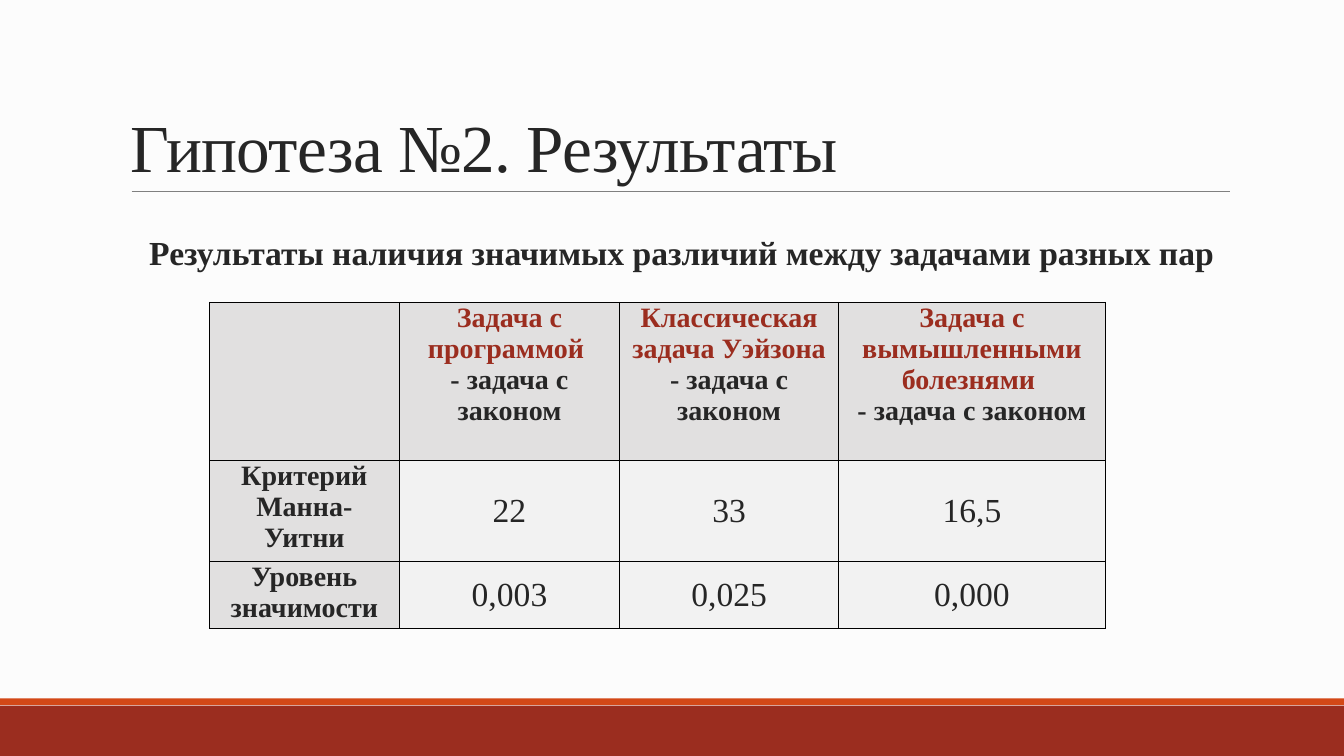
from lxml.etree import SubElement
from pptx import Presentation
from pptx.dml.color import RGBColor
from pptx.enum.shapes import MSO_CONNECTOR as Connector, MSO_SHAPE as Shape
from pptx.enum.text import MSO_ANCHOR as Anchor, PP_ALIGN as Align
from pptx.oxml.ns import qn
from pptx.util import Cm, Pt

COLORS = {
    "background": "FCFCFC", "text": "262626", "accent": "9B2D1F", "stripe": "D34817",
    "rule": "808080", "border": "000000", "header": "E1E0E0", "body": "F2F2F2",
}
LAW_TASK = ("- задача с законом", "text")
# Each cell is a list of paragraphs, each paragraph a list of (text, color) runs.
HEADER = [
    [],
    [[("Задача с программой ", "accent")], [LAW_TASK]],
    [[("Классическая задача Уэйзона ", "accent"), LAW_TASK]],
    [[("Задача с вымышленными болезнями ", "accent")], [LAW_TASK]],
]
RESULTS = [
    ("Критерий Манна-Уитни", "22", "33", "16,5"),
    ("Уровень значимости", "0,003", "0,025", "0,000"),
]
COLUMN_WIDTHS = (4.78, 5.56, 5.51, 6.73)
ROW_HEIGHTS = (3.99, 2.39, 1.6)


def rgb(name):
    return RGBColor.from_string(COLORS[name])


class SlideBuilder:
    font = "Times New Roman"

    def __init__(self, slide):
        self.slide = slide
        slide.background.fill.solid()
        slide.background.fill.fore_color.rgb = rgb("background")

    def run(self, paragraph, text, size, color="text", bold=False):
        run = paragraph.add_run()
        run.text = text
        run.font.name = self.font
        run.font.size = Pt(size)
        run.font.bold = bold
        run.font.color.rgb = rgb(color)
        return run

    def band(self, top, height, color):
        shape = self.slide.shapes.add_shape(
            Shape.RECTANGLE, 0, Cm(top), Cm(33.87), Cm(height))
        shape.shadow.inherit = False
        shape.fill.solid()
        shape.fill.fore_color.rgb = rgb(color)
        shape.line.fill.background()

    def rule(self, left, right, top):
        line = self.slide.shapes.add_connector(
            Connector.STRAIGHT, Cm(left), Cm(top), Cm(right), Cm(top))
        line.line.color.rgb = rgb("rule")
        line.line.width = Pt(0.5)
        SubElement(line._element.spPr, qn("a:effectLst"))

    def text(self, box, text, size, line_spacing, anchor=Anchor.TOP, bold=False):
        """Add a one-paragraph text box and return its paragraph and run."""
        frame = self.slide.shapes.add_textbox(*map(Cm, box)).text_frame
        frame.word_wrap = True
        frame.vertical_anchor = anchor
        paragraph = frame.paragraphs[0]
        paragraph.line_spacing = line_spacing
        return paragraph, self.run(paragraph, text, size, bold=bold)

    def borders(self, cell):
        properties = cell._tc.get_or_add_tcPr()
        for side in ("L", "R", "T", "B"):
            line = SubElement(properties, qn(f"a:ln{side}"), w=str(Pt(0.75)))
            fill = SubElement(line, qn("a:solidFill"))
            SubElement(fill, qn("a:srgbClr"), val=COLORS["border"])

    def cell(self, cell, paragraphs, is_label):
        self.borders(cell)
        cell.fill.solid()
        cell.fill.fore_color.rgb = rgb("header" if is_label else "body")
        cell.margin_left = cell.margin_right = Cm(0.18)
        cell.margin_top = cell.margin_bottom = 0
        cell.vertical_anchor = Anchor.TOP if is_label else Anchor.MIDDLE
        frame = cell.text_frame
        for index, runs in enumerate(paragraphs):
            paragraph = frame.add_paragraph() if index else frame.paragraphs[0]
            paragraph.alignment = Align.CENTER
            for text, color in runs:
                self.run(paragraph, text, 20 if is_label else 24, color, is_label)

    def table(self, left, top, rows):
        table = self.slide.shapes.add_table(
            len(rows), len(COLUMN_WIDTHS), Cm(left), Cm(top),
            Cm(sum(COLUMN_WIDTHS)), Cm(sum(ROW_HEIGHTS))).table
        for column, width in zip(table.columns, COLUMN_WIDTHS):
            column.width = Cm(width)
        for row, height in zip(table.rows, ROW_HEIGHTS):
            row.height = Cm(height)
        for y, row in enumerate(rows):
            for x, paragraphs in enumerate(row):
                self.cell(table.cell(y, x), paragraphs, is_label=x == 0 or y == 0)


def main():
    presentation = Presentation()
    presentation.slide_width, presentation.slide_height = Cm(33.87), Cm(19.05)
    builder = SlideBuilder(presentation.slides.add_slide(presentation.slide_layouts[6]))

    builder.band(17.78, 1.27, "accent")
    builder.band(17.6, 0.17, "stripe")
    builder.rule(3.32, 31, 4.83)

    _, title = builder.text((3.05, 0.79, 27.94, 4.03), "Гипотеза №2. Результаты",
                            48, 0.85, Anchor.BOTTOM)
    title.font._element.set("spc", "-50")

    results = [[[[(text, "text")]] for text in row] for row in RESULTS]
    builder.table(5.28, 7.62, [HEADER] + results)

    caption, _ = builder.text(
        (1.5, 5.21, 29.49, 1.65),
        "Результаты наличия значимых различий между задачами разных пар",
        24, 1.5, bold=True)
    caption.alignment = Align.JUSTIFY
    indents = caption._p.get_or_add_pPr()
    indents.set("marL", str(Cm(0.76)))
    indents.set("indent", str(Cm(1.25)))

    presentation.save("out.pptx")


if __name__ == "__main__":
    main()
